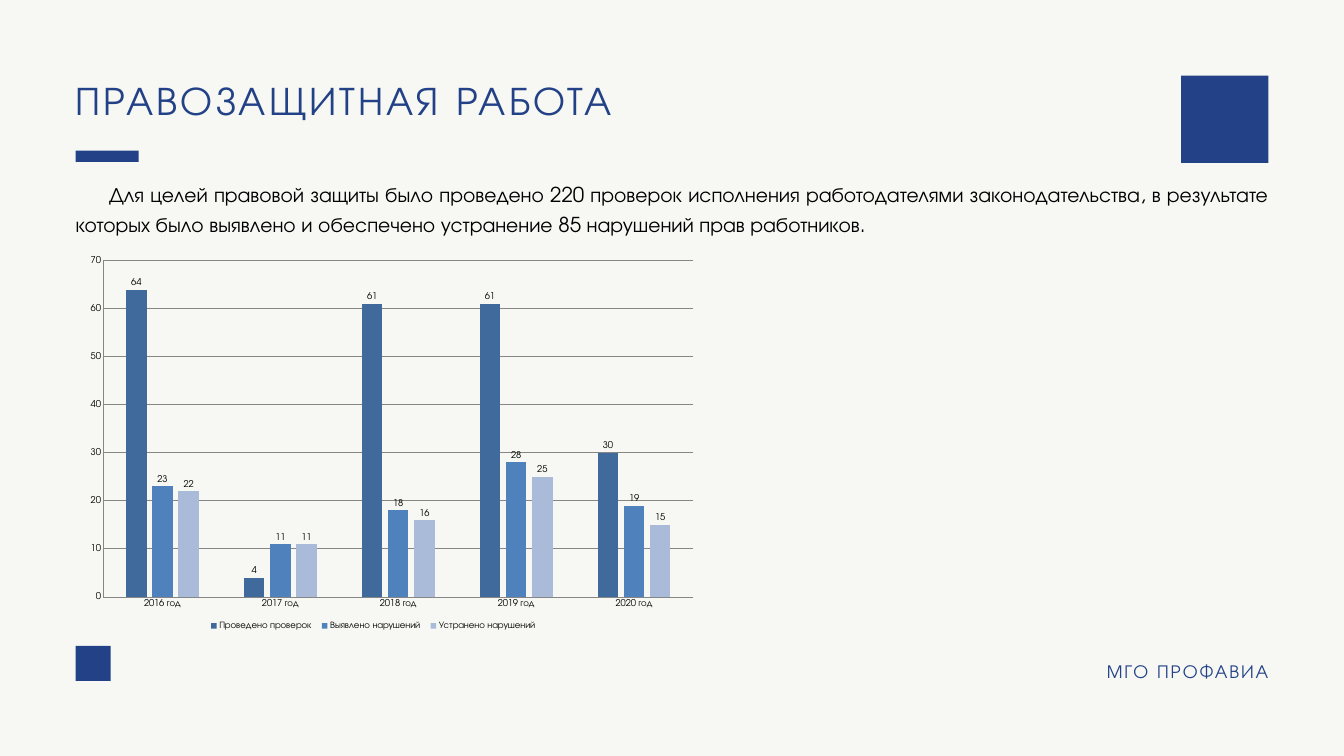
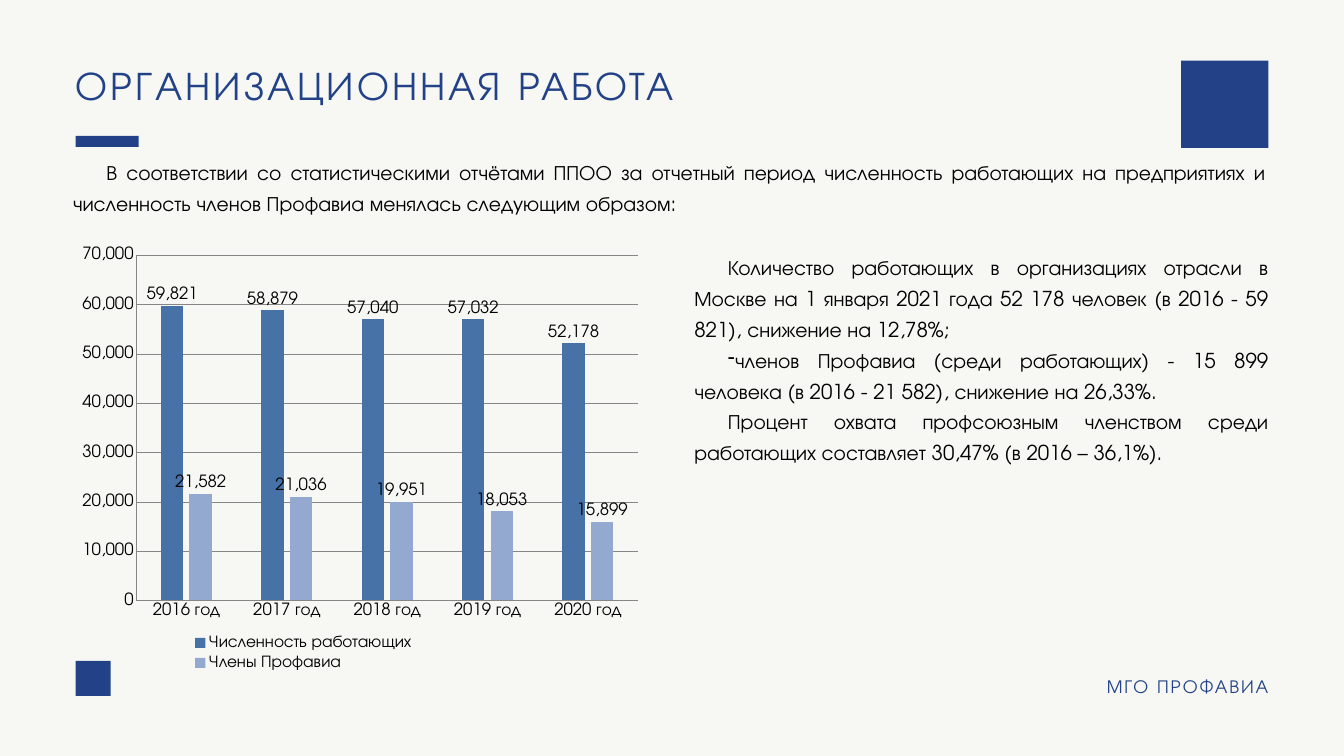
from lxml.etree import SubElement, fromstring
from pptx import Presentation
from pptx.chart.data import CategoryChartData
from pptx.dml.color import RGBColor
from pptx.enum.chart import XL_CHART_TYPE as ChartType
from pptx.enum.chart import XL_LABEL_POSITION as LabelPos
from pptx.enum.chart import XL_LEGEND_POSITION as LegendPos
from pptx.enum.chart import XL_TICK_MARK as Tick
from pptx.enum.shapes import MSO_SHAPE as Shape
from pptx.enum.text import MSO_ANCHOR as Anchor
from pptx.enum.text import MSO_AUTO_SIZE as AutoSize
from pptx.enum.text import PP_ALIGN as Align
from pptx.oxml.ns import nsdecls, qn
from pptx.util import Pt

FONT = "TeX Gyre Adventor"
NAVY = RGBColor(0x22, 0x41, 0x87)
PAPER = RGBColor(0xF7, 0xF8, 0xF3)
BLACK = RGBColor(0, 0, 0)
GRID = RGBColor(0x86, 0x86, 0x86)
DEEP_BLUE = RGBColor(0x40, 0x69, 0x9C)
MID_BLUE = RGBColor(0x4F, 0x81, 0xBD)
PALE_BLUE = RGBColor(0xAA, 0xBA, 0xD9)
STEEL_BLUE = RGBColor(0x46, 0x72, 0xA8)
SOFT_BLUE = RGBColor(0x93, 0xA9, 0xCF)

LEFT, RIGHT = 81, 1359
YEARS = [f"{year} год" for year in range(2016, 2021)]
TITLE = {"size": 43, "color": NAVY, "spacing": 3.4, "line": 51.6, "align": Align.LEFT, "indent": 0}
BODY = {"size": 22, "color": BLACK, "spacing": 0, "line": 33, "align": Align.JUSTIFY, "indent": 36}
FOOTER = {"size": 20, "color": NAVY, "spacing": 2, "line": 27.7, "align": Align.RIGHT, "indent": 0}
FRAME = {"margin_left": 0, "margin_top": 0, "margin_right": 0, "margin_bottom": 0,
         "word_wrap": True, "auto_size": AutoSize.NONE, "vertical_anchor": Anchor.TOP}


def write(holder, box, lines, style):
    """Place a text holder and fill it; a line starting with "-" gets a dash bullet."""
    holder.left, holder.top, holder.width, holder.height = map(Pt, box)
    frame = holder.text_frame
    for name, value in FRAME.items():
        setattr(frame, name, value)
    for number, line in enumerate(lines):
        paragraph = frame.add_paragraph() if number else frame.paragraphs[0]
        properties = paragraph._p.get_or_add_pPr()
        properties.set("marL", "0")
        properties.set("indent", str(Pt(style["indent"])))
        if line.startswith("-"):
            SubElement(properties, qn("a:buChar")).set("char", "-")
        paragraph.alignment = style["align"]
        paragraph.line_spacing = Pt(style["line"])
        paragraph.space_before = Pt(0)
        run = paragraph.add_run()
        run.text = line.removeprefix("-")
        run.font.name, run.font.size = FONT, Pt(style["size"])
        run.font.color.rgb = style["color"]
        if style["spacing"]:
            run.font._element.set("spc", str(round(style["spacing"] * 100)))


def manual_layout(box, target=""):
    """Chart layout as fractions of the chart: left, top, width, height."""
    values = "".join(f'<c:{key} val="{value}"/>' for key, value in zip("xywh", box))
    modes = '<c:xMode val="edge"/><c:yMode val="edge"/>'
    return fromstring(f"<c:layout {nsdecls('c')}><c:manualLayout>{target}{modes}{values}"
                      "</c:manualLayout></c:layout>")


pages = [
    {
        "title": "ПРАВОЗАЩИТНАЯ РАБОТА",
        "shift": 0,
        "texts": [((LEFT, 188, 1278, 64), [
            "Для целей правовой защиты было проведено 220 проверок исполнения работодателями "
            "законодательства, в результате которых было выявлено и обеспечено устранение "
            "85 нарушений прав работников."])],
        "chart_box": (84, 267, 672, 414),
        "chart_size": 10,
        "scale": (70, 10),
        "number_format": "General",
        "series": [("Проведено проверок", [64, 4, 61, 61, 30], DEEP_BLUE),
                   ("Выявлено нарушений", [23, 11, 18, 28, 19], MID_BLUE),
                   ("Устранено нарушений", [22, 11, 16, 25, 15], PALE_BLUE)],
        "plot_area": (0.04, 0.03, 0.94, 0.87),
        "legend_area": (0.2, 0.95, 0.54, 0.05),
    },
    {
        "title": "ОРГАНИЗАЦИОННАЯ РАБОТА",
        "shift": 16,
        "texts": [((78, 165, 1278, 64), [
            "В соответствии со статистическими отчётами ППОО за отчетный период численность "
            "работающих на предприятиях и численность членов Профавиа менялась следующим образом:"]),
            ((744, 267, 615, 233), [
                "Количество работающих в организациях отрасли в Москве на 1 января 2021 года "
                "52 178 человек (в 2016 - 59 821), снижение на 12,78%;",
                "-членов Профавиа (среди работающих) - 15 899 человека (в 2016 - 21 582), "
                "снижение на 26,33%.",
                "Процент охвата профсоюзным членством среди работающих составляет 30,47% "
                "(в 2016 – 36,1%)."])],
        "chart_box": (78, 255, 618, 468),
        "chart_size": 18,
        "scale": (70000, 10000),
        "number_format": "#,##0",
        "series": [("Численность работающих", [59821, 58879, 57040, 57032, 52178], STEEL_BLUE),
                   ("Члены Профавиа", [21582, 21036, 19951, 18053, 15899], SOFT_BLUE)],
        "plot_area": (0.11, 0.04, 0.87, 0.79),
        "legend_area": (0.19, 0.9, 0.42, 0.1),
    },
]

prs = Presentation()
prs.slide_width, prs.slide_height = Pt(1440), Pt(810)
background = prs.slide_master.background.fill
background.solid()
background.fore_color.rgb = PAPER

for page in pages:
    slide = prs.slides.add_slide(prs.slide_layouts[5])
    shift = page["shift"]

    # Heading, texts and footer
    write(slide.shapes.title, (LEFT, 81 - shift, 976, 50), [page["title"]], TITLE)
    for box, lines in page["texts"]:
        write(slide.shapes.add_textbox(0, 0, 0, 0), box, lines, BODY)
    write(slide.shapes.add_textbox(0, 0, 0, 0), (RIGHT - 488, 703 + shift, 488, 27),
          ["МГО ПРОФАВИА"], FOOTER)

    # Underline, corner square and footer square
    for box in [(LEFT, 161.5 - shift, 67.5, 12), (RIGHT - 93.5, 81 - shift, 93.5, 93.5),
                (LEFT, 692 + shift, 37.5, 37.5)]:
        accent = slide.shapes.add_shape(Shape.RECTANGLE, *map(Pt, box))
        accent.shadow.inherit = False
        accent.fill.solid()
        accent.fill.fore_color.rgb = NAVY
        accent.line.fill.background()

    # Chart by year
    data = CategoryChartData(number_format=page["number_format"])
    data.categories = YEARS
    for name, values, _ in page["series"]:
        data.add_series(name, values)
    chart = slide.shapes.add_chart(ChartType.COLUMN_CLUSTERED, *map(Pt, page["chart_box"]), data).chart
    chart.has_title = False
    chart.font.name, chart.font.size = FONT, Pt(page["chart_size"])
    chart.font.color.rgb = BLACK

    plot = chart.plots[0]
    plot.gap_width, plot.overlap, plot.vary_by_categories = 219, -27, False
    plot.has_data_labels = True
    label_format = {"show_value": True, "position": LabelPos.OUTSIDE_END,
                    "number_format": page["number_format"], "number_format_is_linked": False}
    for name, value in label_format.items():
        setattr(plot.data_labels, name, value)
    for series, (_, _, color) in zip(plot.series, page["series"]):
        series.format.fill.solid()
        series.format.fill.fore_color.rgb = color

    # Axes
    value_axis = chart.value_axis
    value_axis.minimum_scale = 0
    value_axis.maximum_scale, value_axis.major_unit = page["scale"]
    value_axis.has_major_gridlines = True
    value_axis.tick_labels.number_format = page["number_format"]
    value_axis.tick_labels.number_format_is_linked = False
    for axis in (chart.category_axis, value_axis):
        axis.major_tick_mark = axis.minor_tick_mark = Tick.NONE
    for part in (chart.category_axis, value_axis, value_axis.major_gridlines):
        part.format.line.color.rgb = GRID
        part.format.line.width = Pt(0.75)

    # Legend and plot area placement
    chart.has_legend = True
    chart.legend.position = LegendPos.BOTTOM
    chart.legend.include_in_layout = False
    chart.legend._element.insert(1, manual_layout(page["legend_area"]))
    plot_area = chart._chartSpace.chart.plotArea
    for layout in plot_area.findall(qn("c:layout")):
        plot_area.remove(layout)
    plot_area.insert(0, manual_layout(page["plot_area"], '<c:layoutTarget val="inner"/>'))

prs.save("out.pptx")
